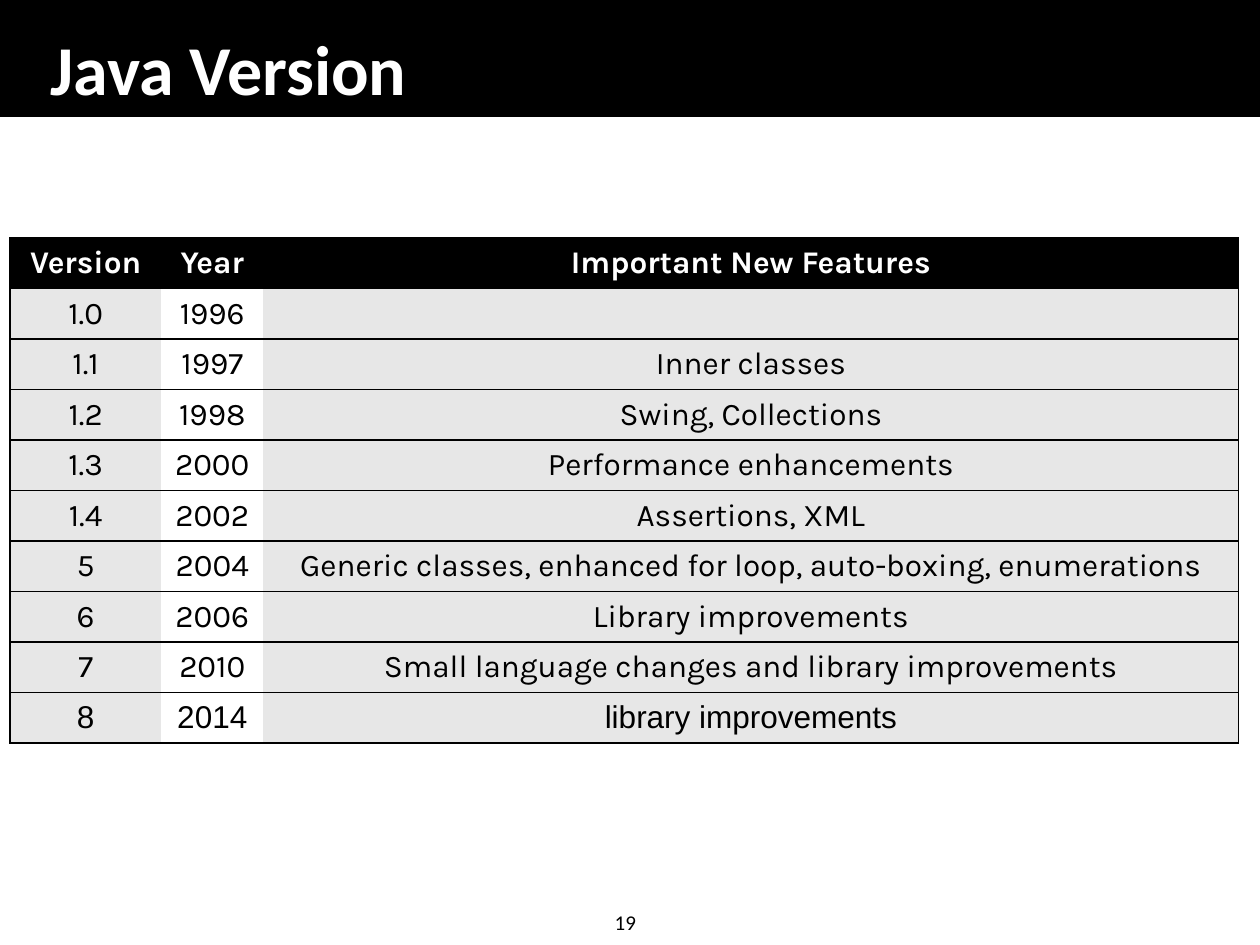
"""Build the Java version history slide."""
from lxml.etree import SubElement
from pptx import Presentation
from pptx.dml.color import RGBColor
from pptx.enum.shapes import MSO_SHAPE
from pptx.enum.text import MSO_ANCHOR, MSO_AUTO_SIZE, PP_ALIGN
from pptx.oxml.ns import qn
from pptx.util import Inches, Pt


def color(value):
    return RGBColor.from_string(value)


def write(frame, text, align, font_color, **font_format):
    paragraph = frame.paragraphs[0]
    paragraph.text = text
    paragraph.alignment = align
    for name, value in font_format.items():
        setattr(paragraph.font, name, value)
    paragraph.font.color.rgb = color(font_color)


presentation = Presentation()
presentation.slide_width = Inches(10)
presentation.slide_height = Inches(7.5)
slide = presentation.slides.add_slide(presentation.slide_layouts[5])

header_bar = slide.shapes.add_shape(MSO_SHAPE.RECTANGLE, 0, 0, Inches(10), Inches(0.92))
header_bar.shadow.inherit = False
header_bar.fill.solid()
header_bar.fill.fore_color.rgb = color("000000")
header_bar.line.color.rgb = color("000000")
header_bar.line.width = Pt(1)

title = slide.shapes.title
header_bar._element.addnext(title._element)
title_place = {"left": 0.3, "top": 0.21, "width": 9.36, "height": 0.71}
for name, value in title_place.items():
    setattr(title, name, Inches(value))
title.text_frame.vertical_anchor = MSO_ANCHOR.BOTTOM
title.text_frame.auto_size = MSO_AUTO_SIZE.NONE
write(title.text_frame, "Java Version", PP_ALIGN.LEFT, "FFFFFF",
      name="Calibri", size=Pt(40), bold=True)

page_number = slide.shapes.add_textbox(Inches(4.78), Inches(7.17), Inches(0.41), Inches(0.3))
page_number.text_frame.word_wrap = False
page_number.text_frame.auto_size = MSO_AUTO_SIZE.SHAPE_TO_FIT_TEXT
write(page_number.text_frame, "19", PP_ALIGN.LEFT, "000000", name="Calibri", size=Pt(12))

versions = [
    ("Version", "Year", "Important New Features"),
    ("1.0", "1996", ""),
    ("1.1", "1997", "Inner classes"),
    ("1.2", "1998", "Swing, Collections"),
    ("1.3", "2000", "Performance enhancements"),
    ("1.4", "2002", "Assertions, XML"),
    ("5", "2004", "Generic classes, enhanced for loop, auto-boxing, enumerations"),
    ("6", "2006", "Library improvements"),
    ("7", "2010", "Small language changes and library improvements"),
    ("8", "2014", "library improvements"),
]
column_widths = [1.2, 0.81, 7.74]
column_fills = ["E7E7E7", "FFFFFF", "E7E7E7"]
column_borders = ["LTB", "TB", "RTB"]
last_row = len(versions) - 1

table = slide.shapes.add_table(len(versions), len(column_widths), Inches(0.08), Inches(1.89),
                               Inches(sum(column_widths)), Inches(4.01)).table
for column, width in zip(table.columns, column_widths):
    column.width = Inches(width)

for row_index, version in enumerate(versions):
    is_header = row_index == 0
    table.rows[row_index].height = Inches(4.01 / len(versions))
    for column_index, text in enumerate(version):
        cell = table.cell(row_index, column_index)
        cell.vertical_anchor = MSO_ANCHOR.MIDDLE
        write(cell.text_frame, text, PP_ALIGN.CENTER, "FFFFFF" if is_header else "000000",
              name="Arial" if row_index == last_row else "Karla", size=Pt(18), bold=is_header)
        properties = cell._tc.get_or_add_tcPr()
        for side in "LRTB":
            border = SubElement(properties, qn(f"a:ln{side}"), w=str(Pt(1)))
            if side in column_borders[column_index]:
                fill = SubElement(border, qn("a:solidFill"))
                SubElement(fill, qn("a:srgbClr"), val="000000")
            else:
                SubElement(border, qn("a:noFill"))
        cell.fill.solid()
        cell.fill.fore_color.rgb = color("000000" if is_header else column_fills[column_index])

presentation.save("out.pptx")
